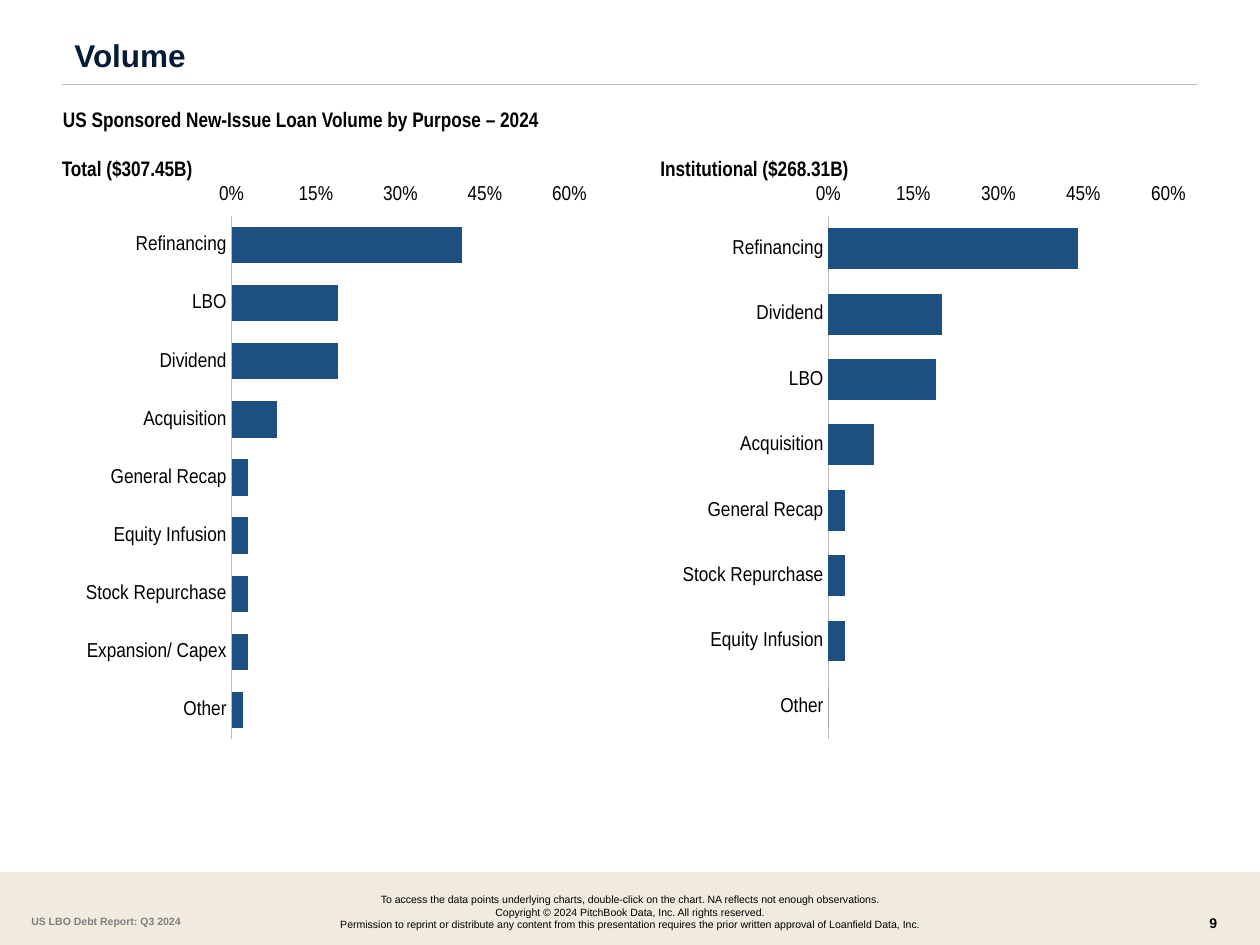
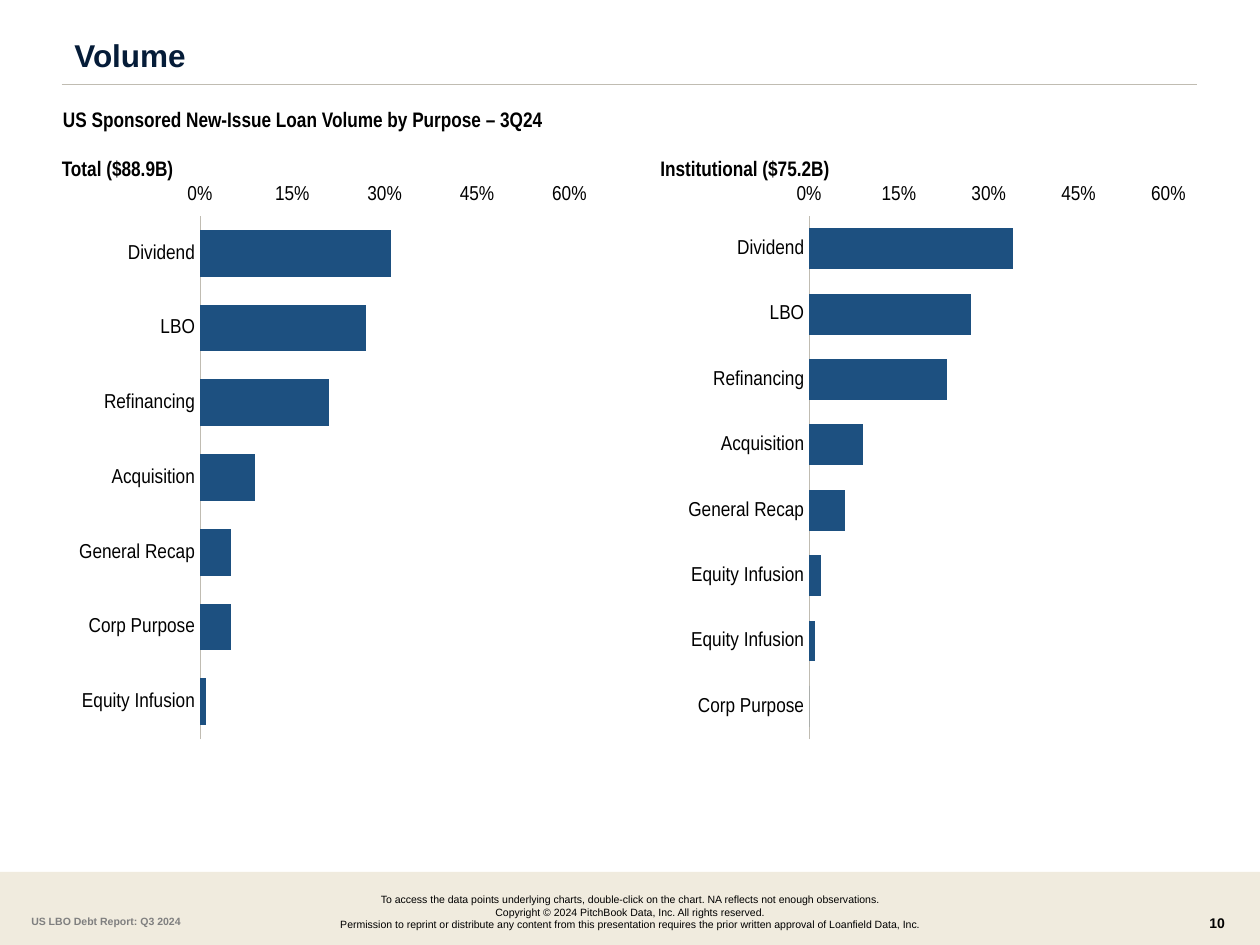
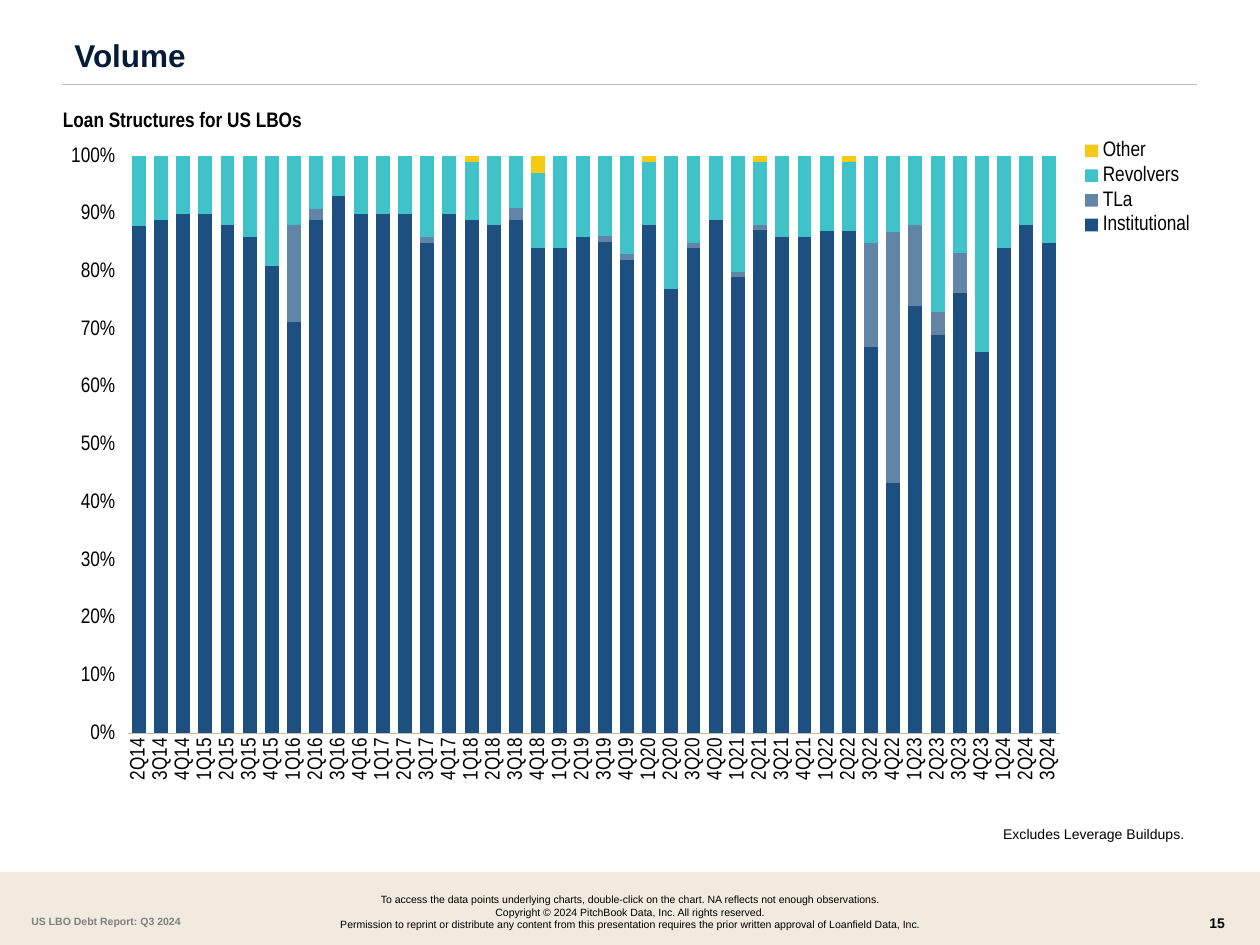
"""Build three loan-volume slides with bar and stacked column charts."""
from lxml.etree import SubElement
from pptx import Presentation
from pptx.chart.data import CategoryChartData
from pptx.dml.color import RGBColor
from pptx.enum.chart import XL_AXIS_CROSSES as Crosses, XL_CHART_TYPE as ChartType
from pptx.enum.chart import XL_LEGEND_POSITION as LegendPosition, XL_TICK_MARK as TickMark
from pptx.enum.shapes import MSO_CONNECTOR as Connector, MSO_SHAPE as Shape
from pptx.enum.text import MSO_ANCHOR as Anchor, MSO_AUTO_SIZE as AutoSize, PP_ALIGN as Align
from pptx.oxml.ns import qn
from pptx.util import Inches, Pt

WIDTH, HEIGHT = 10, 7.5
MARGIN, COLUMN, STEP = 0.49, 4.25, 4.75
BAND_TOP = 6.92
NAVY, BLACK, GREY, RULE, BAND = "051C38", "000000", "7F7F7F", "C0BCB2", "F0EBDE"
BLUE, SLATE, TEAL, YELLOW = "1D5080", "6185A6", "40C2C9", "F5C914"
NARROW = "Arial Narrow"

TITLE = "Volume"
REPORT = "US LBO Debt Report: Q3 2024"
NOTICE = [
    "To access the data points underlying charts, double-click on the chart. NA reflects not enough observations.",
    "Copyright © 2024 PitchBook Data, Inc. All rights reserved.",
    "Permission to reprint or distribute any content from this presentation requires "
    "the prior written approval of Loanfield Data, Inc.",
]

PURPOSE_SLIDES = [
    {"page": 9, "heading": "US Sponsored New-Issue Loan Volume by Purpose – 2024", "panels": [
        ("Total ($307.45B)", (0.317, 0.631), [
            ("Refinancing", 0.41), ("LBO", 0.19), ("Dividend", 0.19), ("Acquisition", 0.08),
            ("General Recap", 0.03), ("Equity Infusion", 0.03), ("Stock Repurchase", 0.03),
            ("Expansion/ Capex", 0.03), ("Other", 0.02)]),
        ("Institutional ($268.31B)", (0.314, 0.635), [
            ("Refinancing", 0.44), ("Dividend", 0.2), ("LBO", 0.19), ("Acquisition", 0.08),
            ("General Recap", 0.03), ("Stock Repurchase", 0.03), ("Equity Infusion", 0.03),
            ("Other", 0)]),
    ]},
    {"page": 10, "heading": "US Sponsored New-Issue Loan Volume by Purpose – 3Q24", "panels": [
        ("Total ($88.9B)", (0.258, 0.69), [
            ("Dividend", 0.31), ("LBO", 0.27), ("Refinancing", 0.21), ("Acquisition", 0.09),
            ("General Recap", 0.05), ("Corp Purpose", 0.05), ("Equity Infusion", 0.01)]),
        ("Institutional ($75.2B)", (0.278, 0.671), [
            ("Dividend", 0.34), ("LBO", 0.27), ("Refinancing", 0.23), ("Acquisition", 0.09),
            ("General Recap", 0.06), ("Equity Infusion", 0.02), ("Equity Infusion", 0.01),
            ("Corp Purpose", 0)]),
    ]},
]

QUARTERS = [f"{quarter}Q{year}" for year in range(14, 25) for quarter in range(1, 5)][1:-1]
INSTITUTIONAL = [
    87, 89, 90, 90, 88, 86, 81, 72, 88, 93, 90, 90, 90, 85, 90, 89, 88, 89, 85, 84, 86,
    86, 82, 89, 77, 84, 89, 79, 88, 86, 86, 87, 87, 67, 43, 74, 69, 77, 66, 84, 88, 85]
REVOLVERS = [
    12, 11, 10, 10, 12, 14, 19, 12, 9, 7, 10, 10, 10, 14, 10, 10, 12, 9, 13, 16, 14,
    14, 17, 11, 23, 15, 11, 20, 11, 14, 14, 13, 12, 15, 13, 12, 27, 17, 34, 16, 12, 15]
TLA = {"1Q16": 17, "2Q16": 2, "3Q17": 1, "3Q18": 2, "3Q19": 1, "4Q19": 1, "3Q20": 1, "1Q21": 1,
       "2Q21": 1, "3Q22": 18, "4Q22": 43, "1Q23": 14, "2Q23": 4, "3Q23": 7}
OTHER = {"1Q18": 1, "4Q18": 3, "1Q20": 1, "2Q21": 1, "2Q22": 1}
STRUCTURES = {
    "page": 15, "heading": "Loan Structures for US LBOs", "note": "Excludes Leverage Buildups.",
    "series": [
        ("Institutional", INSTITUTIONAL, BLUE),
        ("TLa", [TLA.get(quarter, 0) for quarter in QUARTERS], SLATE),
        ("Revolvers", REVOLVERS, TEAL),
        ("Other", [OTHER.get(quarter, 0) for quarter in QUARTERS], YELLOW),
    ],
}


def rgb(code):
    return RGBColor.from_string(code)


def place(holder, box):
    holder.left, holder.top, holder.width, holder.height = map(Inches, box)


def write(holder, *lines, size=12, color=BLACK, bold=False, font="Arial", align=Align.LEFT,
          anchor=Anchor.TOP, inset=0.1, spacing=1.0):
    frame = holder.text_frame
    frame.word_wrap, frame.auto_size = True, AutoSize.NONE
    frame.vertical_anchor, frame.margin_left = anchor, Inches(inset)
    for index, line in enumerate(lines):
        paragraph = frame.add_paragraph() if index else frame.paragraphs[0]
        paragraph.text, paragraph.alignment = line, align
        paragraph.line_spacing, paragraph.space_before = spacing, Pt(0)
        face = paragraph.font
        face.name, face.size, face.bold = font, Pt(size), bold
        face.color.rgb = rgb(color)


def write_box(slide, box, *lines, **style):
    write(slide.shapes.add_textbox(*map(Inches, box)), *lines, **style)


def write_heading(holder, line):
    write(holder, line, font=NARROW, bold=True, anchor=Anchor.MIDDLE, inset=0, spacing=1.2)


def start_slide(deck, layout, page, heading):
    slide = deck.slides.add_slide(deck.slide_layouts.get_by_name(layout))
    band = slide.shapes.add_shape(
        Shape.RECTANGLE, 0, Inches(BAND_TOP), Inches(WIDTH), Inches(HEIGHT - BAND_TOP))
    band.shadow.inherit = False
    band.fill.solid()
    band.fill.fore_color.rgb = rgb(BAND)
    band.line.fill.background()
    write_box(slide, (9.5, 7.21, 0.42, 0.25), str(page), size=8, bold=True)
    write_box(slide, (0.84, 7.04, 8.32, 0.4), *NOTICE, size=6, align=Align.CENTER)
    write_box(slide, (0.15, 7.21, 1.54, 0.2), REPORT, size=6, color=GREY, bold=True)
    rule = slide.shapes.add_connector(
        Connector.STRAIGHT, *map(Inches, (MARGIN, 0.67, WIDTH - 0.5, 0.67)))
    rule.line.color.rgb, rule.line.width = rgb(RULE), Pt(0.75)
    SubElement(rule.element.spPr, qn("a:effectLst"))
    place(slide.shapes.title, (MARGIN, 0.27, 7.68, 0.31))
    write(slide.shapes.title, TITLE, size=18, color=NAVY, bold=True, spacing=0.9)
    write_heading(slide.shapes.add_textbox(*map(Inches, (0.5, 0.77, 4.8, 0.31))), heading)
    return slide


def set_plot_area(chart, area):
    plot_area = chart.element.find(".//" + qn("c:plotArea"))
    for previous in plot_area.findall(qn("c:layout")):
        plot_area.remove(previous)
    layout = SubElement(plot_area, qn("c:layout"))
    plot_area.insert(0, layout)
    manual = SubElement(layout, qn("c:manualLayout"))
    settings = [("layoutTarget", "inner"), ("xMode", "edge"), ("yMode", "edge")]
    for tag, value in settings + list(zip("xywh", area)):
        SubElement(manual, qn(f"c:{tag}"), val=str(value))


def draw_chart(slide, kind, box, categories, series, area, number_format):
    data = CategoryChartData(number_format=number_format)
    data.categories = categories
    for name, values, _ in series:
        data.add_series(name, values)
    chart = slide.shapes.add_chart(kind, *map(Inches, box), data).chart
    chart.has_title = chart.has_legend = False
    chart.font.name, chart.font.size = NARROW, Pt(12)
    chart.font.color.rgb = rgb(BLACK)
    plot = chart.plots[0]
    plot.gap_width, plot.vary_by_categories = 60, False
    for bars, (_, _, color) in zip(plot.series, series):
        bars.format.fill.solid()
        bars.format.fill.fore_color.rgb = rgb(color)
        bars.invert_if_negative = False
    names, scale = chart.category_axis, chart.value_axis
    names.major_tick_mark = TickMark.NONE
    names.format.line.color.rgb, names.format.line.width = rgb(RULE), Pt(0.25)
    scale.has_major_gridlines = False
    scale.format.line.fill.background()
    scale.tick_labels.number_format = "0%"
    scale.tick_labels.number_format_is_linked = False
    set_plot_area(chart, area)
    return chart


def add_purpose_slide(deck, page, heading, panels):
    slide = start_slide(deck, "Comparison", page, heading)
    holders = {holder.placeholder_format.idx: holder for holder in slide.placeholders}
    for spare in (2, 4):
        holders[spare].element.getparent().remove(holders[spare].element)
    for column, (label, (start, span), shares) in enumerate(panels):
        left = MARGIN + column * STEP
        place(holders[1 + 2 * column], (left, 1.16, COLUMN, 0.31))
        write_heading(holders[1 + 2 * column], label)
        purposes, values = zip(*shares)
        chart = draw_chart(slide, ChartType.BAR_CLUSTERED, (left, 1.47, COLUMN, 4.7), purposes,
                           [("Series 1", values, BLUE)], (start, 0.014, span, 0.919), "0%")
        chart.category_axis.reverse_order = True
        chart.category_axis.crosses = Crosses.MAXIMUM
        scale = chart.value_axis
        scale.minimum_scale, scale.maximum_scale, scale.major_unit = 0, 0.6, 0.15


def add_structure_slide(deck, page, heading, note, series):
    slide = start_slide(deck, "Title Only", page, heading)
    write_box(slide, (0.58, 6.5, 8.92, 0.24), note, size=8, align=Align.RIGHT)
    chart = draw_chart(slide, ChartType.COLUMN_STACKED_100, (0.5, 1.08, 9, 5.5), QUARTERS,
                       series, (0.057, 0.029, 0.822, 0.833), "0")
    chart.plots[0].overlap = 100
    chart.has_legend = True
    chart.legend.position = LegendPosition.CORNER
    chart.legend.include_in_layout = False
    chart.category_axis.tick_labels.font.size = Pt(12)
    chart.element.xpath(".//c:catAx/c:txPr/a:bodyPr")[0].set("rot", "-5400000")


def main():
    deck = Presentation()
    deck.slide_width, deck.slide_height = Inches(WIDTH), Inches(HEIGHT)
    for content in PURPOSE_SLIDES:
        add_purpose_slide(deck, **content)
    add_structure_slide(deck, **STRUCTURES)
    deck.save("out.pptx")


if __name__ == "__main__":
    main()
